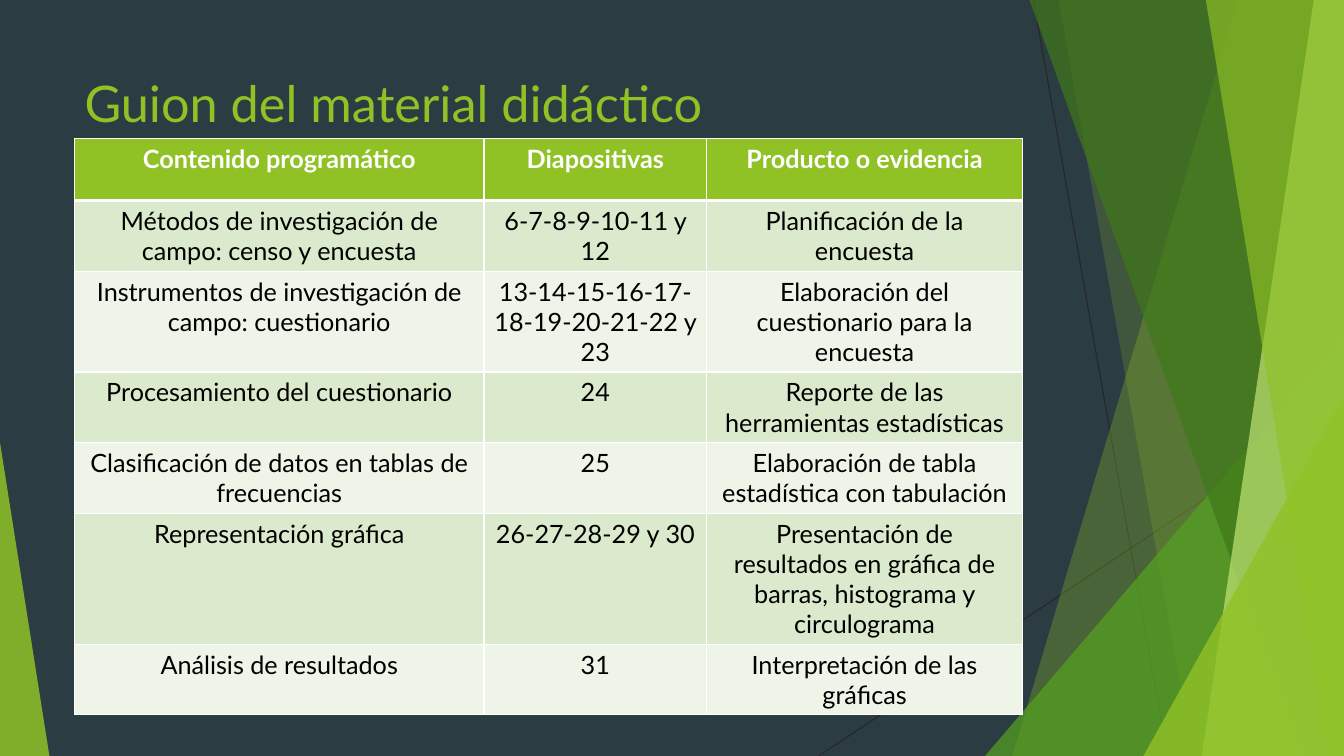
import pptx
import pptx.dml.color
import pptx.enum.shapes
import pptx.enum.text
import pptx.oxml
import pptx.oxml.ns
import pptx.util

TITLE = "Guion del material didáctico"
ROWS = [
    ("Contenido programático", "Diapositivas", "Producto o evidencia"),
    ("Métodos de investigación de campo: censo y encuesta",
     "6-7-8-9-10-11 y 12", "Planificación de la encuesta"),
    ("Instrumentos de investigación de campo: cuestionario",
     "13-14-15-16-17-18-19-20-21-22 y 23",
     "Elaboración del cuestionario para la encuesta"),
    ("Procesamiento del cuestionario", "24",
     "Reporte de las herramientas estadísticas"),
    ("Clasificación de datos en tablas de frecuencias", "25",
     "Elaboración de tabla estadística con tabulación"),
    ("Representación gráfica", "26-27-28-29 y 30",
     "Presentación de resultados en gráfica de barras, histograma y circulograma"),
    ("Análisis de resultados", "31", "Interpretación de las gráficas"),
]

THEME = {
    "font": "Lato", "title_size": 36, "table_size": 18,
    "background": "2C3C43", "line": "262626", "accent": "90C226",
    "green": "54A021", "forest": "3F7819", "lime": "C0E474",
    "white": "FFFFFF", "black": "000000",
    "bands": ("EEF4E8", "DBE9CD"),
}

PX = 9144  # EMU per px, 100 px to the inch
WIDTH, HEIGHT = 1333, 750
TITLE_BOX = (74, 67, 940, 100)
TABLE_LEFT, TABLE_TOP, ROW_HEIGHT = 74, 137, 62
COLUMN_WIDTHS = (406, 221, 313)

HAIRLINES = [(1025, 0, 1158, HEIGHT), (WIDTH, 403, 812, HEIGHT)]
# Panel: x of the left edge at top and bottom; it reaches the right slide edge.
# Triangle: left, top, width, apex position; it stands on the bottom slide edge.
FACETS = [
    ("panel", (1228, 1004), "accent", 30),
    ("panel", (1050, 1183), "accent", 20),
    ("triangle", (977, 333, 356, 1), "green", 72),
    ("panel", (1021, 1291), "forest", 70),
    ("panel", (1303, 1192), "lime", 70),
    ("panel", (1196, 1318), "accent", 65),
    ("triangle", (1134, 393, 199, 1), "accent", 80),
    ("triangle", (0, 439, 49, 0), "accent", 85),
]


def emu(*lengths):
    return [pptx.util.Emu(length * PX) for length in lengths]


def rgb(value):
    return pptx.dml.color.RGBColor.from_string(value)


def paint(fill, color):
    fill.solid()
    fill.fore_color.rgb = rgb(color)


def set_text(text_frame, text, size, color, bold=False, align="LEFT"):
    paragraph = text_frame.paragraphs[0]
    paragraph.alignment = getattr(pptx.enum.text.PP_ALIGN, align)
    run = paragraph.add_run()
    run.text = text
    formats = {"name": THEME["font"], "size": pptx.util.Pt(size), "bold": bold}
    for name, value in formats.items():
        setattr(run.font, name, value)
    run.font.color.rgb = rgb(color)


def add_hairline(slide, ends):
    line = slide.shapes.add_connector(
        pptx.enum.shapes.MSO_CONNECTOR.STRAIGHT, *emu(*ends))
    line.line.width = pptx.util.Pt(0.75)
    line.line.color.rgb = rgb(THEME["line"])
    properties = line._element.spPr
    properties.append(properties.makeelement(pptx.oxml.ns.qn("a:effectLst"), {}))


def add_facet(slide, kind, geometry, color, opacity):
    if kind == "panel":
        top_x, bottom_x = geometry
        builder = slide.shapes.build_freeform(top_x, 0, scale=PX)
        builder.add_line_segments(
            [(WIDTH, 0), (WIDTH, HEIGHT), (bottom_x, HEIGHT)], close=True)
        shape = builder.convert_to_shape()
    else:
        left, top, width, apex = geometry
        shape = slide.shapes.add_shape(
            pptx.enum.shapes.MSO_SHAPE.ISOSCELES_TRIANGLE,
            *emu(left, top, width, HEIGHT - top))
        shape.adjustments[0] = apex
    shape.shadow.inherit = False
    shape.line.fill.background()
    paint(shape.fill, THEME[color])
    color_element = shape._element.spPr.find(".//" + pptx.oxml.ns.qn("a:srgbClr"))
    alpha = color_element.makeelement(
        pptx.oxml.ns.qn("a:alpha"), {"val": str(opacity * 1000)})
    color_element.append(alpha)


def set_borders(cell, widths):
    properties = cell._tc.get_or_add_tcPr()
    for index, (side, points) in enumerate(widths.items()):
        border = pptx.oxml.parse_xml(
            f'<a:{side} {pptx.oxml.ns.nsdecls("a")} w="{points * 12700}">'
            f'<a:solidFill><a:srgbClr val="{THEME["white"]}"/></a:solidFill>'
            f'</a:{side}>')
        properties.insert(index, border)


def add_schedule(slide):
    frame = slide.shapes.add_table(
        len(ROWS), len(COLUMN_WIDTHS),
        *emu(TABLE_LEFT, TABLE_TOP, sum(COLUMN_WIDTHS), ROW_HEIGHT * len(ROWS)))
    table = frame.table
    table.horz_banding = False
    for column, width in zip(table.columns, COLUMN_WIDTHS):
        column.width = emu(width)[0]
    for row_index, texts in enumerate(ROWS):
        header = row_index == 0
        table.rows[row_index].height = emu(ROW_HEIGHT)[0]
        fill = THEME["accent"] if header else THEME["bands"][row_index % 2]
        color = THEME["white"] if header else THEME["black"]
        borders = {"lnL": 1, "lnR": 1, "lnT": 3 if row_index == 1 else 1,
                   "lnB": 3 if header else 1}
        for column_index, text in enumerate(texts):
            cell = table.cell(row_index, column_index)
            paint(cell.fill, fill)
            set_borders(cell, borders)
            set_text(cell.text_frame, text, THEME["table_size"], color,
                     bold=header, align="CENTER")


def main():
    presentation = pptx.Presentation()
    presentation.slide_width, presentation.slide_height = emu(WIDTH, HEIGHT)
    slide = presentation.slides.add_slide(presentation.slide_layouts[6])
    paint(slide.background.fill, THEME["background"])
    for ends in HAIRLINES:
        add_hairline(slide, ends)
    for facet in FACETS:
        add_facet(slide, *facet)
    title = slide.shapes.add_textbox(*emu(*TITLE_BOX))
    title.text_frame.word_wrap = True
    set_text(title.text_frame, TITLE, THEME["title_size"], THEME["accent"])
    add_schedule(slide)
    presentation.save("out.pptx")


if __name__ == "__main__":
    main()
